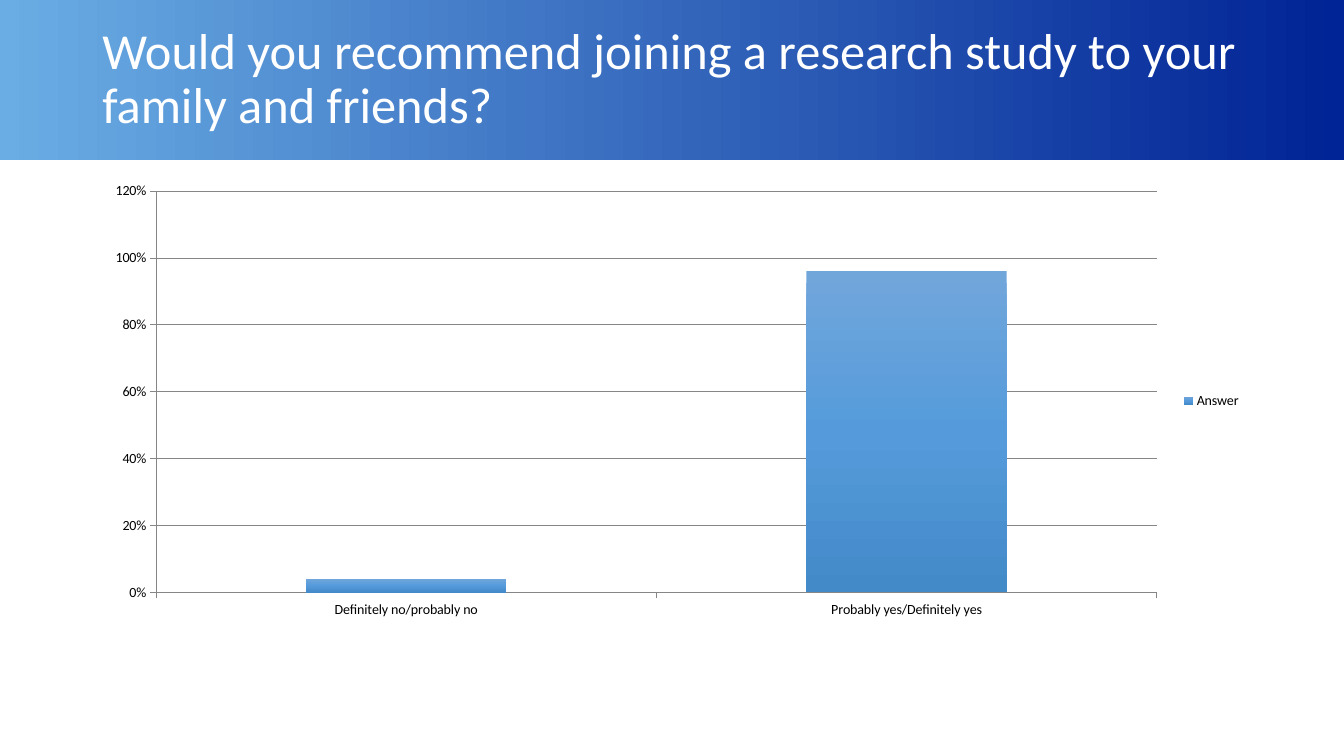
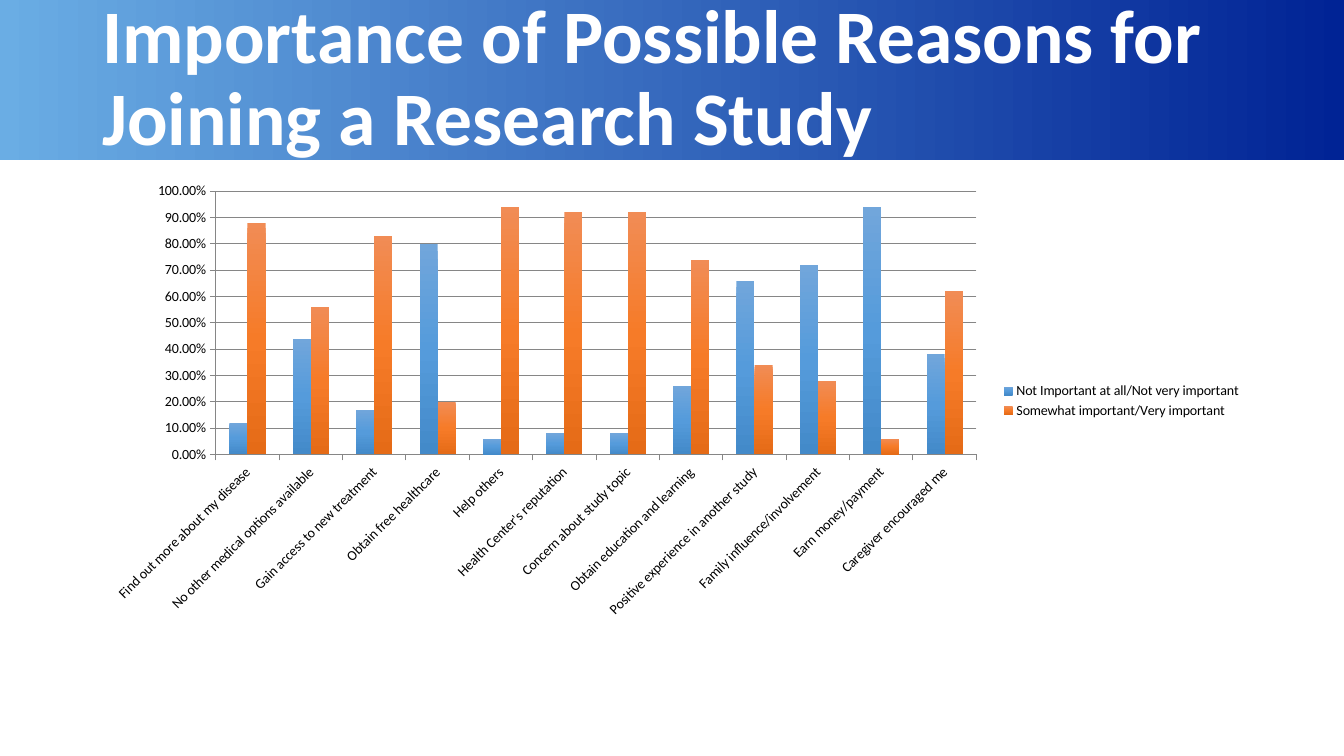
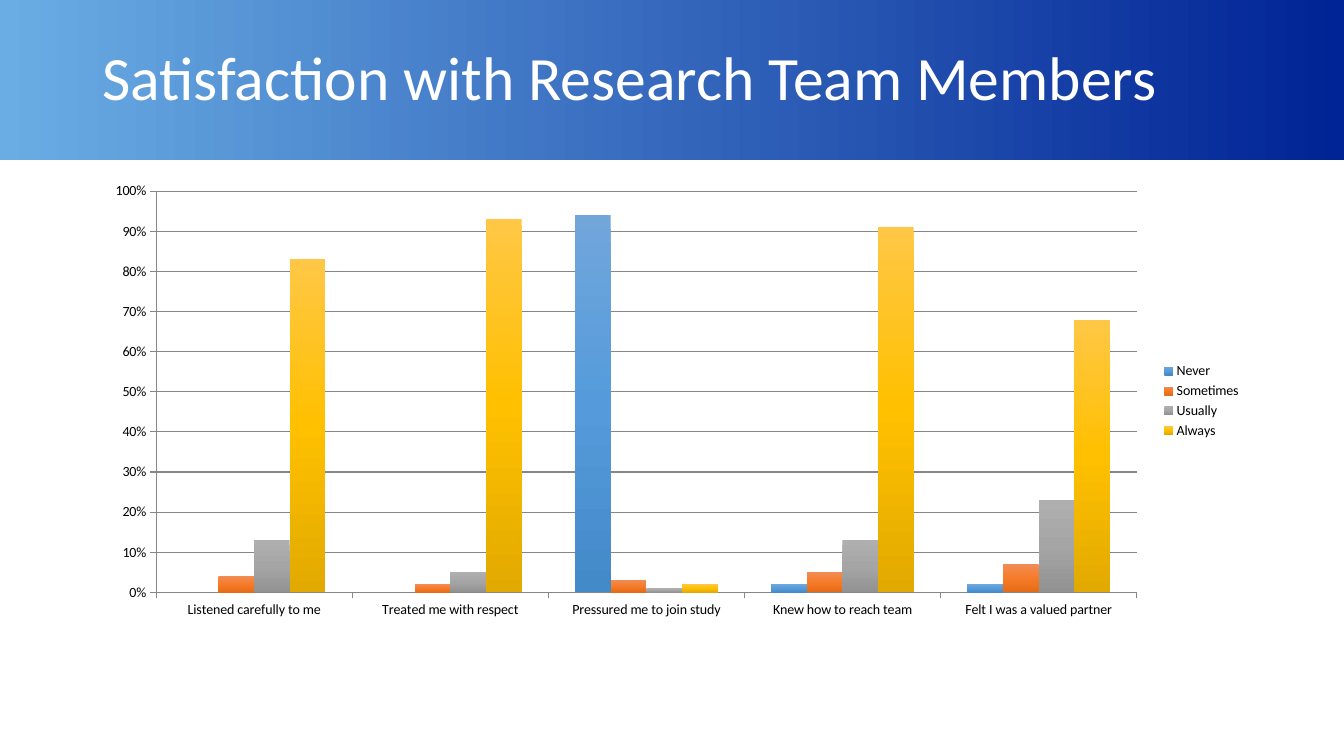
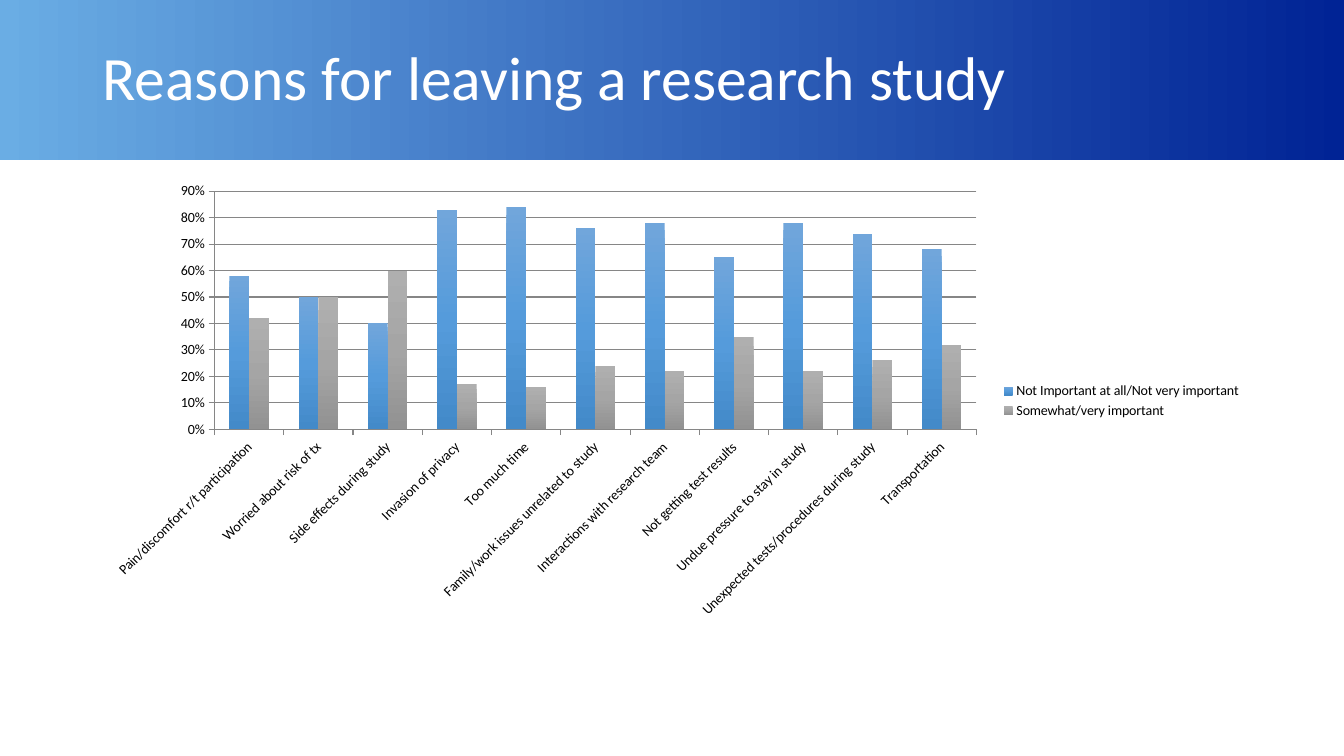
from copy import deepcopy

from pptx import Presentation
from pptx.chart.data import CategoryChartData
from pptx.dml.color import RGBColor
from pptx.enum.chart import XL_CHART_TYPE, XL_LEGEND_POSITION, XL_TICK_MARK
from pptx.enum.shapes import MSO_SHAPE
from pptx.enum.text import MSO_ANCHOR
from pptx.util import Pt

COLOURS = {
    "white": "FFFFFF",
    "black": "000000",
    "axis": "868686",
    "band_left": "6AADE4",
    "band_right": "002395",
}
# Top, middle and bottom of the columns
COLUMN_SHADES = {
    "blue": ("71A6DB", "559BDB", "438AC9"),
    "orange": ("F18C55", "F67B28", "E56B17"),
    "grey": ("AFAFAF", "A5A5A5", "929292"),
    "yellow": ("FFC746", "FFC000", "E2AA00"),
}
FONT = "Calibri"
PAGE_WIDTH, PAGE_HEIGHT = 960, 540
MARGIN, CONTENT_WIDTH = 66, 828
BAND_HEIGHT = 114
TITLE_TOP, TITLE_HEIGHT = 5, 104.4
CHART_TOP, CHART_HEIGHT = 124.5, 323.5
MAX_LEVEL_LABELS = 6


def colour(value):
    return RGBColor.from_string(value)


def set_format(target, values):
    for name, value in values.items():
        setattr(target, name, value)


def fill_gradient(fill, shades, angle):
    """Spread the shades evenly; the angle runs counter-clockwise."""
    fill.gradient()
    fill.gradient_angle = angle
    stops = fill.gradient_stops
    if len(shades) > len(stops):
        stop_list = stops[0]._gs.getparent()
        stop_list.append(deepcopy(stop_list[-1]))
    for index, (stop, shade) in enumerate(zip(fill.gradient_stops, shades)):
        stop.position = index / (len(shades) - 1)
        stop.color.rgb = colour(shade)


class SurveyDeck:
    def __init__(self):
        self.deck = Presentation()
        set_format(self.deck, {"slide_width": Pt(PAGE_WIDTH), "slide_height": Pt(PAGE_HEIGHT)})
        self.page = None

    def add_page(self, title, size, bold=False):
        self.page = self.deck.slides.add_slide(self.deck.slide_layouts[6])
        self.add_band()
        self.add_title(title, size, bold)

    def add_band(self):
        band = self.page.shapes.add_shape(
            MSO_SHAPE.RECTANGLE, 0, 0, Pt(PAGE_WIDTH), Pt(BAND_HEIGHT))
        band.shadow.inherit = False
        band.line.fill.background()
        fill_gradient(band.fill, (COLOURS["band_left"], COLOURS["band_right"]), 0)

    def add_title(self, title, size, bold):
        box = self.page.shapes.add_textbox(
            Pt(MARGIN), Pt(TITLE_TOP), Pt(CONTENT_WIDTH), Pt(TITLE_HEIGHT))
        frame = box.text_frame
        set_format(frame, {"word_wrap": True, "vertical_anchor": MSO_ANCHOR.MIDDLE})
        para = frame.paragraphs[0]
        para.line_spacing = 0.9
        span = para.add_run()
        span.text = title
        set_format(span.font, {"name": FONT, "size": Pt(size), "bold": bold})
        span.font.color.rgb = colour(COLOURS["white"])

    def add_columns(self, categories, series, top, step, number_format="0%"):
        """Draw clustered columns; series holds (name, shade name, values)."""
        data = CategoryChartData(number_format=number_format)
        data.categories = categories
        for name, _, values in series:
            data.add_series(name, values)
        chart = self.page.shapes.add_chart(
            XL_CHART_TYPE.COLUMN_CLUSTERED, Pt(MARGIN), Pt(CHART_TOP),
            Pt(CONTENT_WIDTH), Pt(CHART_HEIGHT), data).chart
        set_format(chart, {"has_title": False, "has_legend": True})
        set_format(chart.font, {"name": FONT, "size": Pt(10)})
        chart.font.color.rgb = colour(COLOURS["black"])
        set_format(chart.legend, {"position": XL_LEGEND_POSITION.RIGHT,
                                  "include_in_layout": False})

        plot = chart.plots[0]
        set_format(plot, {"gap_width": 150, "overlap": 0, "vary_by_categories": False})
        for column, (_, shade, _) in zip(plot.series, series):
            fill_gradient(column.format.fill, COLUMN_SHADES[shade], 270)
        self.style_axes(chart, top, step, number_format)
        if len(categories) > MAX_LEVEL_LABELS:
            self.slant_labels(chart.category_axis)

    def style_axes(self, chart, top, step, number_format):
        value_axis = chart.value_axis
        set_format(value_axis, {"minimum_scale": 0, "maximum_scale": top,
                                "major_unit": step, "has_major_gridlines": True})
        set_format(value_axis.tick_labels, {"number_format": number_format,
                                            "number_format_is_linked": False})
        for axis in (chart.category_axis, value_axis):
            set_format(axis, {"major_tick_mark": XL_TICK_MARK.OUTSIDE,
                              "minor_tick_mark": XL_TICK_MARK.NONE})
        for lines in (chart.category_axis, value_axis, value_axis.major_gridlines):
            lines.format.line.width = Pt(0.75)
            lines.format.line.color.rgb = colour(COLOURS["axis"])

    def slant_labels(self, axis):
        set_format(axis.tick_labels.font, {"name": FONT, "size": Pt(10)})
        axis.tick_labels.font.color.rgb = colour(COLOURS["black"])
        axis._element.txPr.bodyPr.set("rot", str(-45 * 60000))


def main():
    survey = SurveyDeck()

    survey.add_page("Would you recommend joining a research study to your family and friends?", 36)
    survey.add_columns(
        ["Definitely no/probably no", "Probably yes/Definitely yes"],
        [("Answer", "blue", [0.04, 0.96])],
        top=1.2, step=0.2)

    survey.add_page("Importance of Possible Reasons for Joining a Research Study", 54, bold=True)
    survey.add_columns(
        ["Find out more about my disease", "No other medical options available",
         "Gain access to new treatment", "Obtain free healthcare", "Help others",
         "Health Center's reputation", "Concern about study topic",
         "Obtain education and learning", "Positive experience in another study",
         "Family influence/involvement", "Earn money/payment", "Caregiver encouraged me"],
        [("Not Important at all/Not very important", "blue",
          [0.12, 0.44, 0.17, 0.8, 0.06, 0.08, 0.08, 0.26, 0.66, 0.72, 0.94, 0.38]),
         ("Somewhat important/Very important", "orange",
          [0.88, 0.56, 0.83, 0.2, 0.94, 0.92, 0.92, 0.74, 0.34, 0.28, 0.06, 0.62])],
        top=1, step=0.1, number_format="0.00%")

    survey.add_page("Satisfaction with Research Team Members", 44)
    survey.add_columns(
        ["Listened carefully to me", "Treated me with respect", "Pressured me to join study",
         "Knew how to reach team", "Felt I was a valued partner"],
        [("Never", "blue", [0, 0, 0.94, 0.02, 0.02]),
         ("Sometimes", "orange", [0.04, 0.02, 0.03, 0.05, 0.07]),
         ("Usually", "grey", [0.13, 0.05, 0.01, 0.13, 0.23]),
         ("Always", "yellow", [0.83, 0.93, 0.02, 0.91, 0.68])],
        top=1, step=0.1)

    survey.add_page("Reasons for leaving a research study", 44)
    survey.add_columns(
        ["Pain/discomfort r/t participation", "Worried about risk of tx",
         "Side effects during study", "Invasion of privacy", "Too much time",
         "Family/work issues unrelated to study", "Interactions with research team",
         "Not getting test results", "Undue pressure to stay in study",
         "Unexpected tests/procedures during study", "Transportation"],
        [("Not Important at all/Not very important", "blue",
          [0.58, 0.5, 0.4, 0.83, 0.84, 0.76, 0.78, 0.65, 0.78, 0.74, 0.68]),
         ("Somewhat/very important", "grey",
          [0.42, 0.5, 0.6, 0.17, 0.16, 0.24, 0.22, 0.35, 0.22, 0.26, 0.32])],
        top=0.9, step=0.1)

    survey.deck.save("out.pptx")


if __name__ == "__main__":
    main()
